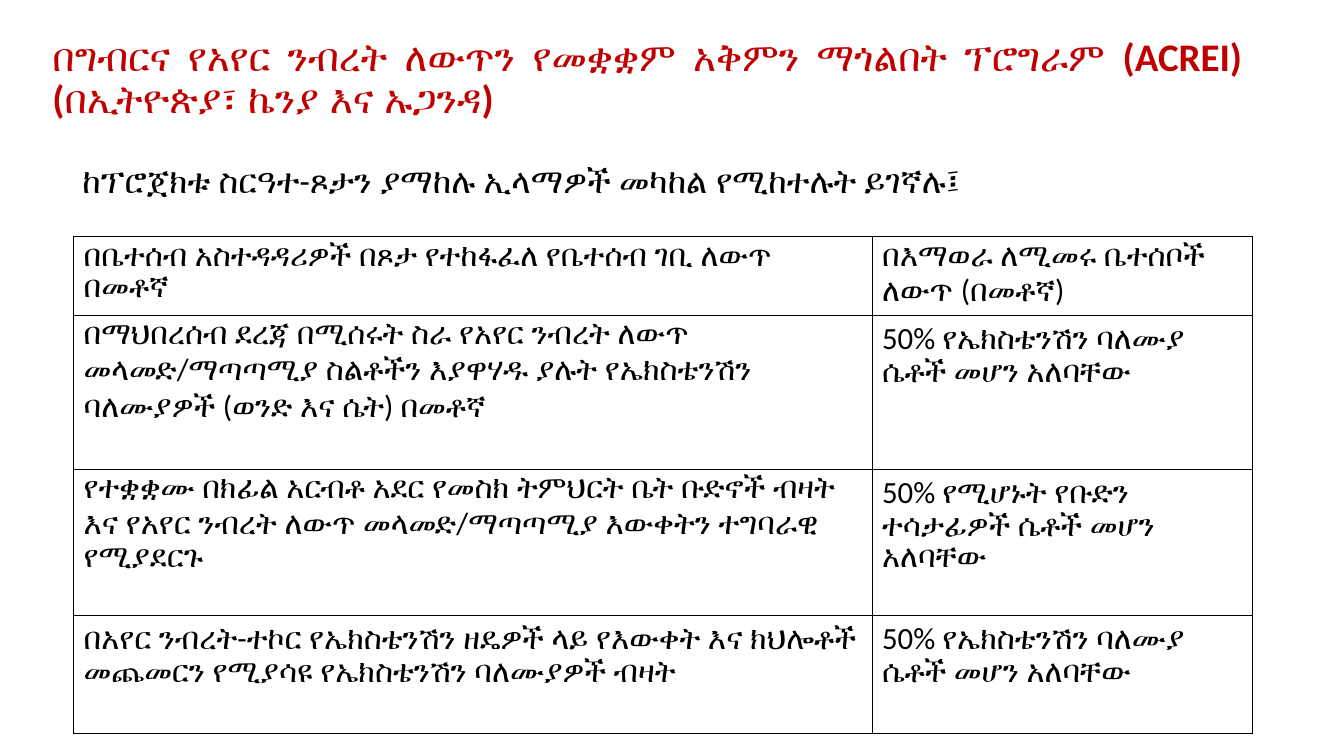
from lxml.etree import SubElement
from pptx import Presentation
from pptx.dml.color import RGBColor
from pptx.enum.text import MSO_ANCHOR, MSO_AUTO_SIZE, PP_ALIGN
from pptx.oxml.ns import qn
from pptx.util import Inches, Pt

COLORS = {"heading": "C00000", "text": "000000", "border": "000000"}
FONT = "Calibri"

COLUMN_WIDTHS = [7.92, 3.77]
ROW_HEIGHTS = [0.77, 1.53, 1.45, 1.17]
TARGETS = [
    ("በቤተሰብ አስተዳዳሪዎች በጾታ የተከፋፈለ የቤተሰብ ገቢ ለውጥ በመቶኛ",
     "በእማወራ ለሚመሩ ቤተሰቦች ለውጥ (በመቶኛ)"),
    ("በማህበረሰብ ደረጃ በሚሰሩት ስራ የአየር ንብረት ለውጥ መላመድ/ማጣጣሚያ ስልቶችን "
     "እያዋሃዱ ያሉት የኤክስቴንሽን ባለሙያዎች (ወንድ እና ሴት) በመቶኛ",
     "50% የኤክስቴንሽን ባለሙያ ሴቶች መሆን አለባቸው"),
    ("የተቋቋሙ በክፊል አርብቶ አደር የመስክ ትምህርት ቤት ቡድኖች ብዛት እና የአየር ንብረት "
     "ለውጥ መላመድ/ማጣጣሚያ እውቀትን ተግባራዊ የሚያደርጉ",
     "50% የሚሆኑት የቡድን ተሳታፊዎች ሴቶች መሆን አለባቸው"),
    ("በአየር ንብረት-ተኮር የኤክስቴንሽን ዘዴዎች ላይ የእውቀት እና ክህሎቶች መጨመርን "
     "የሚያሳዩ የኤክስቴንሽን ባለሙያዎች ብዛት",
     "50% የኤክስቴንሽን ባለሙያ ሴቶች መሆን አለባቸው"),
]


class SlideBuilder:
    def __init__(self, slide):
        self.slide = slide

    def fill_text(self, frame, text, size, color="text", bold=False):
        frame.word_wrap = True
        frame.text = text
        for run in frame.paragraphs[0].runs:
            run.font.name = FONT
            run.font.size = Pt(size)
            run.font.bold = bold
            run.font.color.rgb = RGBColor.from_string(COLORS[color])

    def title(self, text, left, top, width, height):
        heading = self.slide.shapes.title
        heading.left, heading.top = Inches(left), Inches(top)
        heading.width, heading.height = Inches(width), Inches(height)
        frame = heading.text_frame
        self.fill_text(frame, text, 27.9, "heading", bold=True)
        frame.auto_size = MSO_AUTO_SIZE.NONE
        frame.vertical_anchor = MSO_ANCHOR.MIDDLE
        frame.paragraphs[0].alignment = PP_ALIGN.JUSTIFY
        frame.paragraphs[0].line_spacing = 0.9

    def text(self, text, left, top, width, height, size):
        box = self.slide.shapes.add_textbox(
            Inches(left), Inches(top), Inches(width), Inches(height))
        self.fill_text(box.text_frame, text, size)

    def borders(self, cell):
        properties = cell._tc.get_or_add_tcPr()
        for position, side in enumerate(("lnL", "lnR", "lnT", "lnB")):
            line = properties.makeelement(qn(f"a:{side}"), {"w": str(Pt(1))})
            fill = SubElement(line, qn("a:solidFill"))
            SubElement(fill, qn("a:srgbClr"), val=COLORS["border"])
            properties.insert(position, line)

    def table(self, rows, left, top, widths, heights, size):
        table = self.slide.shapes.add_table(
            len(rows), len(widths), Inches(left), Inches(top),
            Inches(sum(widths)), Inches(sum(heights))).table
        table.first_row = table.horz_banding = False
        for column, width in zip(table.columns, widths):
            column.width = Inches(width)
        for row, height, texts in zip(table.rows, heights, rows):
            row.height = Inches(height)
            for cell, text in zip(row.cells, texts):
                self.fill_text(cell.text_frame, text, size)
                cell.fill.background()
                self.borders(cell)


def main():
    presentation = Presentation()
    presentation.slide_width = Inches(13.33)
    presentation.slide_height = Inches(7.5)
    title_only = presentation.slide_layouts[5]
    builder = SlideBuilder(presentation.slides.add_slide(title_only))

    # Gender targets table
    builder.table(TARGETS, 0.73, 2.35, COLUMN_WIDTHS, ROW_HEIGHTS, size=22)

    # Introductory sentence
    builder.text("ከፕሮጀክቱ ስርዓተ-ጾታን ያማከሉ ኢላማዎች መካከል የሚከተሉት ይገኛሉ፤",
                 0.72, 1.54, 11.7, 0.81, size=24)

    # Programme title
    builder.title("በግብርና የአየር ንብረት ለውጥን የመቋቋም አቅምን ማጎልበት ፕሮግራም (ACREI) "
                  "(በኢትዮጵያ፣ ኬንያ እና ኡጋንዳ)", 0.42, 0.4, 12, 0.79)

    presentation.save("out.pptx")


if __name__ == "__main__":
    main()
